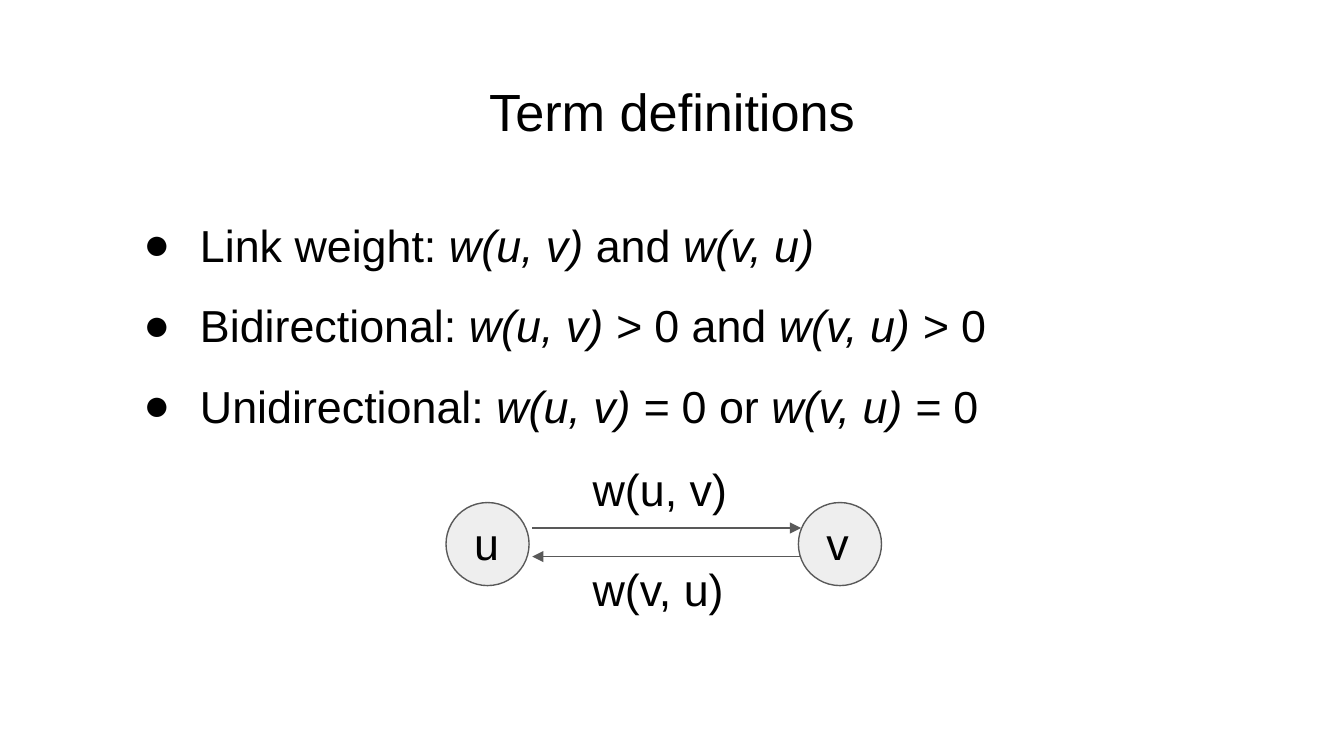
from dataclasses import dataclass

from lxml import etree
from pptx import Presentation
from pptx import util as u
from pptx.dml.color import RGBColor
from pptx.enum import shapes, text
from pptx.oxml import ns


@dataclass(frozen=True)
class Theme:
    font: str = "Arial"
    ink: RGBColor = RGBColor(0x00, 0x00, 0x00)
    outline: RGBColor = RGBColor(0x59, 0x59, 0x59)
    node: RGBColor = RGBColor(0xEE, 0xEE, 0xEE)
    title: u.Pt = u.Pt(28)
    body: u.Pt = u.Pt(24)
    stroke: u.Pt = u.Pt(0.75)


theme = Theme()
deck = Presentation()
deck.slide_width, deck.slide_height = u.Cm(25.4), u.Cm(14.29)
slide = deck.slides.add_slide(deck.slide_layouts[6])


def add_text(left, top, width, height, lines, size):
    box = slide.shapes.add_textbox(u.Cm(left), u.Cm(top), u.Cm(width), u.Cm(height))
    frame = box.text_frame
    frame.word_wrap = True
    frame.vertical_anchor = text.MSO_ANCHOR.TOP
    frame.margin_left = frame.margin_right = u.Cm(0.25)
    frame.margin_top = frame.margin_bottom = u.Cm(0.25)
    for row, pieces in enumerate(lines):
        paragraph = frame.add_paragraph() if row else frame.paragraphs[0]
        for position, piece in enumerate(pieces):
            run = paragraph.add_run()
            run.text = piece
            run.font.name = theme.font
            run.font.size = size
            run.font.color.rgb = theme.ink
            run.font.italic = position % 2 == 1
    return frame.paragraphs


def add_child(parent, tag, **attributes):
    return etree.SubElement(parent, ns.qn(tag), attributes)


heading = add_text(0.86, 1.24, 23.68, 1.6, [["Term definitions"]], theme.title)
heading[0].alignment = text.PP_ALIGN.CENTER

definitions = [
    ["Link weight: ", "w(u, v)", " and ", "w(v, u)"],
    ["Bidirectional: ", "w(u, v) > ", "0 and", " w(v, u) > ", "0"],
    ["Unidirectional: ", "w(u, v) = ", "0 or ", "w(v, u) = ", "0"],
]
for definition in add_text(2.26, 3.35, 20.9, 9.5, definitions, theme.body):
    definition.line_spacing = 1.5
    properties = definition._p.get_or_add_pPr()
    properties.set("marL", str(u.Cm(1.27)))
    properties.set("indent", str(u.Cm(-1.07)))
    bullet_color = add_child(properties, "a:buClr")
    add_child(bullet_color, "a:srgbClr", val=str(theme.ink))
    add_child(properties, "a:buFont", typeface=theme.font)
    add_child(properties, "a:buChar", char="●")

node_top, node_size = 9.5, 1.57
for name, left in [("u", 8.43), ("v", 15.09)]:
    node = slide.shapes.add_shape(
        shapes.MSO_SHAPE.OVAL, u.Cm(left), u.Cm(node_top), u.Cm(node_size), u.Cm(node_size)
    )
    node.shadow.inherit = False
    node.fill.solid()
    node.fill.fore_color.rgb = theme.node
    node.line.color.rgb = theme.outline
    node.line.width = theme.stroke
    add_text(left + 0.28, node_top, 1.12, 1.37, [[name]], theme.body)

near_u, near_v = 10.06, 15.14
links = [
    ("w(u, v)", near_u, near_v, 9.98, 8.48),
    ("w(v, u)", near_v, near_u, 10.52, 10.36),
]
for weight, start, end, height, label_top in links:
    link = slide.shapes.add_connector(
        shapes.MSO_CONNECTOR.STRAIGHT, u.Cm(start), u.Cm(height), u.Cm(end), u.Cm(height)
    )
    link.line.color.rgb = theme.outline
    link.line.width = theme.stroke
    add_child(link.line._get_or_add_ln(), "a:tailEnd", type="triangle")
    add_child(link._element.spPr, "a:effectLst")
    add_text(10.95, label_top, 3.18, 1.47, [[weight]], theme.body)

deck.save("out.pptx")
